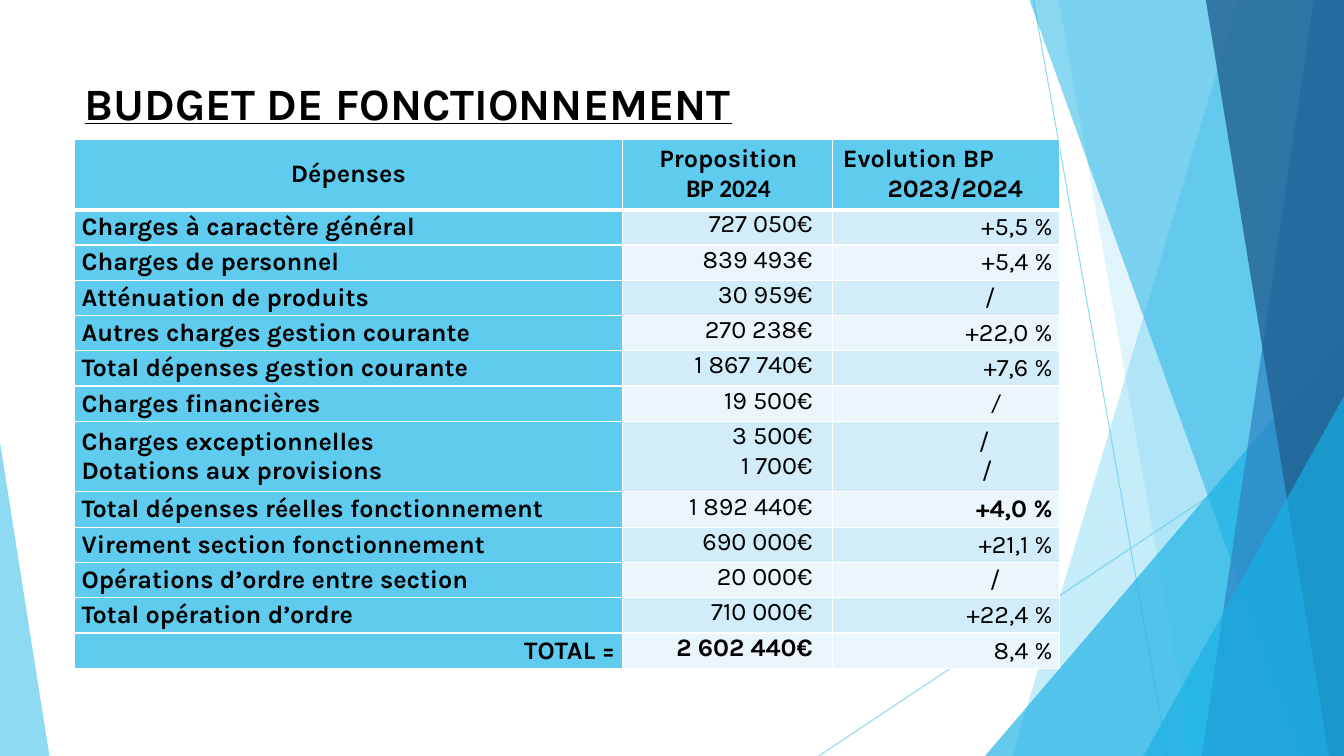
from dataclasses import dataclass

from lxml.etree import SubElement
from pptx import Presentation
from pptx.dml.color import RGBColor
from pptx.enum.shapes import MSO_CONNECTOR as Connector, MSO_SHAPE as Shape
from pptx.enum.text import MSO_ANCHOR as Anchor, PP_ALIGN as Align
from pptx.oxml.ns import qn
from pptx.util import Inches, Pt

BLACK = RGBColor(0x00, 0x00, 0x00)
WHITE = RGBColor(0xFF, 0xFF, 0xFF)
SKY = RGBColor(0x5F, 0xCB, 0xEF)
CYAN = RGBColor(0x17, 0xB0, 0xE4)
BLUE = RGBColor(0x2E, 0x83, 0xC3)
NAVY = RGBColor(0x22, 0x62, 0x92)
ROW_FILLS = (RGBColor(0xD2, 0xEC, 0xF9), RGBColor(0xEA, 0xF6, 0xFC))

SLIDE_W, SLIDE_H = 13.33, 7.5
FONT = "Karla"
ROW_H = 0.35
COLUMN_WIDTHS = (5.43, 2.09, 2.25)


@dataclass
class Line:
    text: str
    align: Align = Align.RIGHT
    bold: bool = False
    font: str = FONT
    indent: float = 0


def label(text, align=Align.LEFT):
    return Line(text, align, bold=True)


def heading(text, font=FONT, indent=0.0, align=Align.CENTER):
    return Line(text, align, True, font, indent)


def slash(indent, font=FONT):
    return Line("/", Align.CENTER, font=font, indent=indent)


HEADER = (
    [heading("Dépenses")],
    [heading("Proposition", indent=0.02), heading("BP 2024", "Calibri", 0.02)],
    [heading("Evolution BP", indent=0.03, align=Align.LEFT), heading("2023/2024", indent=0.18)],
)
EXPENSES = (
    ([label("Charges à caractère général")], [Line("727 050€")], [Line("+5,5 %")]),
    ([label("Charges de personnel")], [Line("839 493€")], [Line("+5,4 %")]),
    ([label("Atténuation de produits")], [Line("30 959€")], [slash(0.87)]),
    ([label("Autres charges gestion courante")], [Line("270 238€")], [Line("+22,0 %")]),
    ([label("Total dépenses gestion courante")], [Line("1 867 740€")], [Line("+7,6 %")]),
    ([label("Charges financières")], [Line("19 500€")], [slash(0.99, "Calibri")]),
    ([label("Charges exceptionnelles"), label("Dotations aux provisions")],
     [Line("3 500€"), Line("1 700€")], [slash(0.75), slash(0.81)]),
    ([label("Total dépenses réelles fonctionnement")], [Line("1 892 440€")],
     [Line("+4,0 %", bold=True)]),
    ([label("Virement section fonctionnement")], [Line("690 000€")], [Line("+21,1 %")]),
    ([label("Opérations d’ordre entre section")], [Line("20 000€")], [slash(0.97)]),
    ([label("Total opération d’ordre")], [Line("710 000€")], [Line("+22,4 %")]),
    ([label("TOTAL =", Align.RIGHT)], [Line("2 602 440€", bold=True)], [Line("8,4 %")]),
)


def set_opacity(fill_parent, percent):
    """Make the solid colour directly under fill_parent partly transparent."""
    color = fill_parent.find(qn("a:solidFill")).find(qn("a:srgbClr"))
    SubElement(color, qn("a:alpha")).set("val", str(percent * 1000))


def paint(shape, color, opacity):
    shape.shadow.inherit = False
    shape.line.fill.background()
    shape.fill.solid()
    shape.fill.fore_color.rgb = color
    set_opacity(shape.fill._xPr, opacity)


def add_thin_line(slide, start, end):
    ends = [Inches(value) for value in (*start, *end)]
    line = slide.shapes.add_connector(Connector.STRAIGHT, *ends)
    line.line.color.rgb = SKY
    line.line.width = Pt(0.75)
    properties = line._element.spPr
    set_opacity(properties.find(qn("a:ln")), 70)
    SubElement(properties, qn("a:effectLst"))


def add_band(slide, top_x, bottom_x, color, opacity):
    """Full-height band from a slanted left side to the right slide edge."""
    builder = slide.shapes.build_freeform(Inches(top_x), 0)
    corners = ((SLIDE_W, 0), (SLIDE_W, SLIDE_H), (bottom_x, SLIDE_H))
    builder.add_line_segments([(Inches(x), Inches(y)) for x, y in corners], close=True)
    paint(builder.convert_to_shape(), color, opacity)


def add_corner(slide, left, top, width, apex, color, opacity):
    """Triangle standing on the bottom edge; apex runs from 0 (left) to 1 (right)."""
    corner = slide.shapes.add_shape(Shape.ISOSCELES_TRIANGLE, Inches(left), Inches(top),
                                    Inches(width), Inches(SLIDE_H - top))
    corner.adjustments[0] = apex
    paint(corner, color, opacity)


def add_backdrop(slide):
    add_thin_line(slide, (10.25, 0), (11.58, SLIDE_H))
    add_thin_line(slide, (SLIDE_W, 4.03), (8.12, SLIDE_H))
    add_band(slide, 12.28, 10.04, SKY, 36)
    add_band(slide, 10.5, 11.83, SKY, 20)
    add_corner(slide, 9.77, 3.33, 3.56, 1, CYAN, 66)
    add_band(slide, 10.21, 12.91, CYAN, 50)
    add_band(slide, 13.03, 11.92, BLUE, 70)
    add_band(slide, 11.96, 13.18, NAVY, 80)
    add_corner(slide, 11.34, 3.93, 1.99, 1, CYAN, 66)
    add_corner(slide, 0, 4.39, 0.49, 0, SKY, 70)


def add_title(slide, text):
    title = slide.shapes.add_textbox(Inches(0.74), Inches(0.67), Inches(9.4), Inches(0.69))
    frame = title.text_frame
    frame.word_wrap = True
    frame.vertical_anchor = Anchor.MIDDLE
    paragraph = frame.paragraphs[0]
    paragraph.text = text
    font = paragraph.font
    font.name, font.size, font.bold, font.underline = FONT, Pt(32), True, True
    font.color.rgb = BLACK


def add_borders(cell, top, bottom):
    """White borders, 1 pt at the sides; call before the cell is filled."""
    properties = cell._tc.get_or_add_tcPr()
    for side, width in (("L", 1), ("R", 1), ("T", top), ("B", bottom)):
        border = SubElement(properties, qn(f"a:ln{side}"), w=str(Pt(width)))
        fill = SubElement(border, qn("a:solidFill"))
        SubElement(fill, qn("a:srgbClr"), val=str(WHITE))


def write_lines(cell, lines):
    frame = cell.text_frame
    for index, line in enumerate(lines):
        paragraph = frame.add_paragraph() if index else frame.paragraphs[0]
        paragraph.text = line.text
        paragraph.alignment = line.align
        paragraph._p.get_or_add_pPr().set("marL", str(Inches(line.indent)))
        font = paragraph.font
        font.name, font.size, font.bold = line.font, Pt(18), line.bold
        font.color.rgb = BLACK


def add_budget_table(slide):
    rows = (HEADER, *EXPENSES)
    heights = [ROW_H * max(len(lines) for lines in row) for row in rows]
    table = slide.shapes.add_table(
        len(rows), len(COLUMN_WIDTHS), Inches(0.74), Inches(1.38),
        Inches(sum(COLUMN_WIDTHS)), Inches(sum(heights))).table
    for column, width in zip(table.columns, COLUMN_WIDTHS):
        column.width = Inches(width)
    for row_no, (row, height) in enumerate(zip(rows, heights)):
        table.rows[row_no].height = Inches(height)
        for col_no, lines in enumerate(row):
            cell = table.cell(row_no, col_no)
            is_amount = row_no > 0 and col_no == 1
            add_borders(cell, 3 if row_no == 1 else 1, 3 if row_no == 0 else 1)
            cell.fill.solid()
            is_blue = row_no == 0 or col_no == 0
            cell.fill.fore_color.rgb = SKY if is_blue else ROW_FILLS[(row_no - 1) % 2]
            cell.margin_left = Inches(0.07)
            cell.margin_right = Inches(0.2 if is_amount else 0.07)
            cell.margin_top = cell.margin_bottom = 0
            cell.vertical_anchor = Anchor.TOP if is_amount else Anchor.MIDDLE
            write_lines(cell, lines)


def main():
    deck = Presentation()
    deck.slide_width, deck.slide_height = Inches(SLIDE_W), Inches(SLIDE_H)
    slide = deck.slides.add_slide(deck.slide_layouts[6])
    add_backdrop(slide)
    add_title(slide, "BUDGET DE FONCTIONNEMENT")
    add_budget_table(slide)
    deck.save("out.pptx")


if __name__ == "__main__":
    main()
